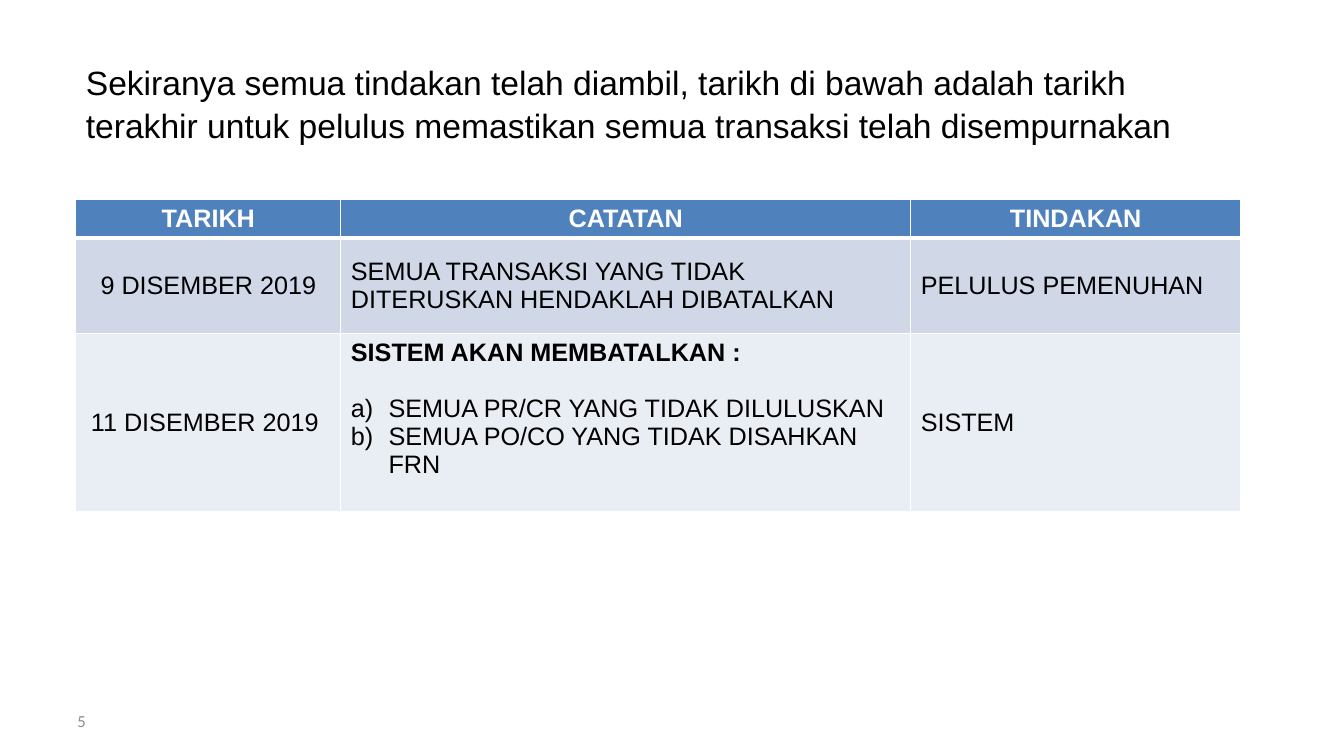
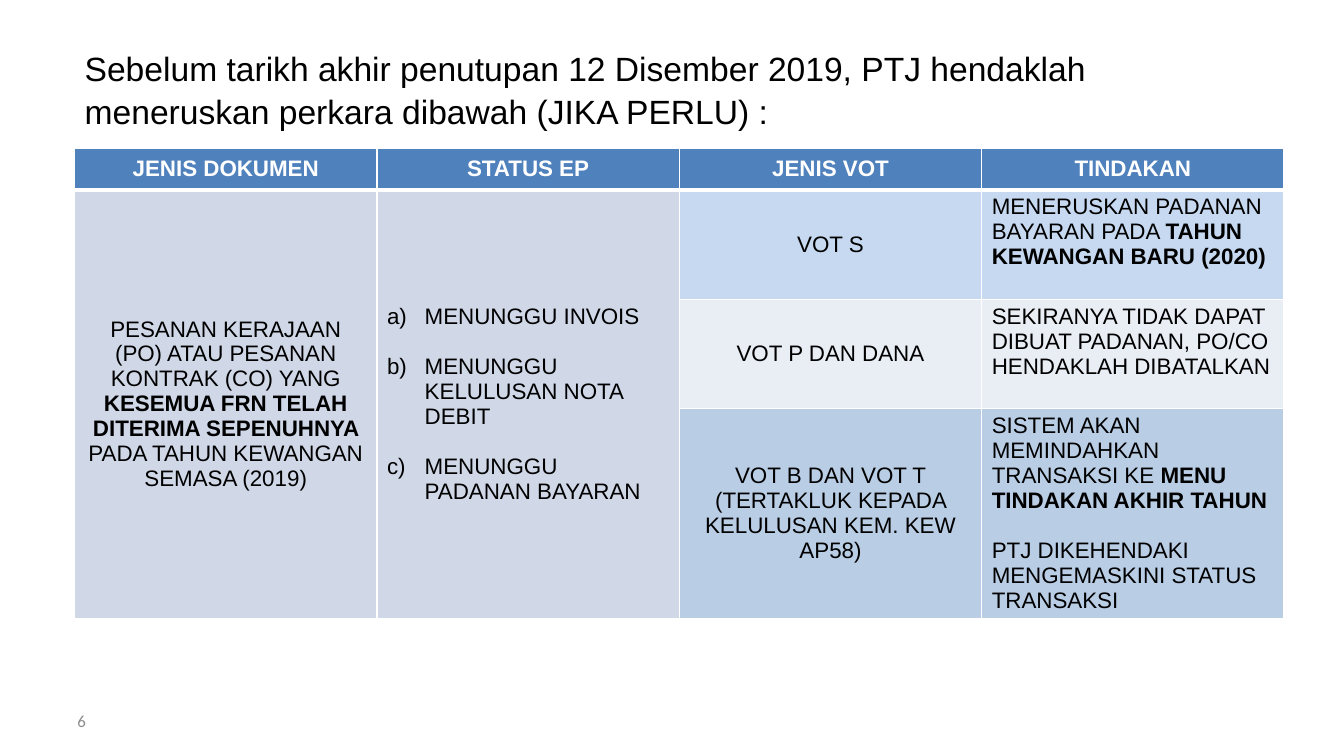
from dataclasses import dataclass
from typing import Any, Optional

from lxml import etree
from pptx import Presentation
from pptx.dml.color import RGBColor
from pptx.enum.text import MSO_ANCHOR, MSO_AUTO_SIZE, PP_ALIGN
from pptx.oxml.ns import qn
from pptx.util import Cm, Pt

LEFT, CENTER = PP_ALIGN.LEFT, PP_ALIGN.CENTER
TOP, MIDDLE = MSO_ANCHOR.TOP, MSO_ANCHOR.MIDDLE
NO_FIT = MSO_AUTO_SIZE.NONE
TITLE_ONLY = 5

COLORS = {
    "header": "4F81BD",
    "band_dark": "D0D8E8",
    "band_light": "E9EDF4",
    "vot_s": "C6D9F1",
    "vot_b": "B9CDE5",
    "white": "FFFFFF",
    "black": "000000",
    "number": "8C8C8C",
}
TITLE_FORMAT = {"name": "Arial", "size": Pt(24), "bold": False}
NUMBER_FORMAT = {"name": "Calibri", "size": Pt(12), "bold": False}
THIN, THICK = Pt(1), Pt(3)
LIST_INDENT = Cm(0.95)


@dataclass(frozen=True)
class Span:
    text: str
    bold: bool = False


@dataclass(frozen=True)
class Para:
    spans: tuple[Span, ...]
    align: Any = LEFT
    numbered: bool = False
    gap: float = 0


@dataclass(frozen=True)
class Cell:
    paras: tuple[Para, ...]
    fill: str
    anchor: Any = MIDDLE
    color: str = "black"
    rows: int = 1


@dataclass(frozen=True)
class TablePage:
    number: str
    title: str
    title_top: float
    table_left: float
    table_top: float
    columns: tuple[float, ...]
    heights: tuple[float, ...]
    size: int
    cells: tuple[tuple[Optional[Cell], ...], ...]


# Cell builders
def header_row(*labels: str) -> tuple[Cell, ...]:
    return tuple(
        Cell((Para((Span(label, True),), CENTER),), "header", color="white")
        for label in labels
    )


def plain(text: str, fill: str, align: Any = LEFT, anchor: Any = MIDDLE) -> Cell:
    return Cell((Para((Span(text),), align),), fill, anchor)


# Content
PAGES = (
    TablePage(
        "5",
        "Sekiranya semua tindakan telah diambil, tarikh di bawah adalah tarikh "
        "terakhir untuk pelulus memastikan semua transaksi telah disempurnakan",
        1.37, 1.91, 5.03, (6.68, 14.36, 8.32), (0.95, 2.4, 4.5), 18,
        (
            header_row("TARIKH", "CATATAN", "TINDAKAN"),
            (
                plain("9 DISEMBER 2019", "band_dark", CENTER),
                plain("SEMUA TRANSAKSI YANG TIDAK DITERUSKAN HENDAKLAH DIBATALKAN",
                      "band_dark"),
                plain("PELULUS PEMENUHAN", "band_dark"),
            ),
            (
                plain("11 DISEMBER 2019 ", "band_light", CENTER),
                Cell((
                    Para((Span("SISTEM AKAN MEMBATALKAN :", True),)),
                    Para((Span("SEMUA PR/CR YANG TIDAK DILULUSKAN"),),
                         numbered=True, gap=20),
                    Para((Span("SEMUA PO/CO YANG TIDAK DISAHKAN FRN"),),
                         numbered=True),
                ), "band_light", TOP),
                plain("SISTEM", "band_light"),
            ),
        ),
    ),
    TablePage(
        "6",
        "Sebelum tarikh akhir penutupan 12 Disember 2019, PTJ hendaklah "
        "meneruskan perkara dibawah (JIKA PERLU) :",
        1.02, 1.88, 3.75, (7.62,) * 4, (1.03, 2.77, 2.75, 5.26), 16,
        (
            header_row("JENIS DOKUMEN", "STATUS EP", "JENIS VOT", "TINDAKAN"),
            (
                Cell((Para((
                    Span("PESANAN KERAJAAN (PO) ATAU PESANAN KONTRAK (CO) YANG "),
                    Span("KESEMUA FRN TELAH DITERIMA SEPENUHNYA ", True),
                    Span("PADA TAHUN KEWANGAN SEMASA (2019)"),
                ), CENTER),), "band_dark", rows=3),
                Cell((
                    Para((Span("MENUNGGU INVOIS"),), numbered=True),
                    Para((Span("MENUNGGU KELULUSAN NOTA DEBIT"),),
                         numbered=True, gap=18),
                    Para((Span("MENUNGGU PADANAN BAYARAN"),),
                         numbered=True, gap=18),
                ), "band_dark", rows=3),
                plain("VOT S", "vot_s", CENTER),
                Cell((Para((
                    Span("MENERUSKAN PADANAN BAYARAN PADA "),
                    Span("TAHUN KEWANGAN BARU (2020)", True),
                )),), "vot_s", TOP),
            ),
            (
                None,
                None,
                plain("VOT P DAN DANA", "band_light", CENTER),
                plain("SEKIRANYA TIDAK DAPAT DIBUAT PADANAN, PO/CO HENDAKLAH "
                      "DIBATALKAN", "band_light", anchor=TOP),
            ),
            (
                None,
                None,
                plain("VOT B DAN VOT T (TERTAKLUK KEPADA KELULUSAN KEM. KEW AP58)",
                      "vot_b", CENTER),
                Cell((
                    Para((
                        Span("SISTEM AKAN MEMINDAHKAN TRANSAKSI KE "),
                        Span("MENU TINDAKAN AKHIR TAHUN", True),
                    )),
                    Para((Span("PTJ DIKEHENDAKI MENGEMASKINI STATUS TRANSAKSI"),),
                         gap=18),
                ), "vot_b", TOP),
            ),
        ),
    ),
)


# Text helpers
def set_all(target: Any, values: dict[str, Any]) -> None:
    for name, value in values.items():
        setattr(target, name, value)


def add_span(para: Any, text: str, values: dict[str, Any], color: str) -> None:
    run = para.add_run()
    run.text = text
    set_all(run.font, values)
    run.font.color.rgb = RGBColor.from_string(COLORS[color])


def add_numbering(para: Any) -> None:
    properties = para._p.get_or_add_pPr()
    properties.set("marL", str(LIST_INDENT))
    properties.set("indent", str(-LIST_INDENT))
    etree.SubElement(properties, qn("a:buFont"), typeface="+mj-lt")
    etree.SubElement(properties, qn("a:buAutoNum"), type="alphaLcParenR")


# Table parts
def add_borders(cell: Any, row: int) -> None:
    widths = {
        "L": THIN,
        "R": THIN,
        "T": THICK if row == 1 else THIN,
        "B": THICK if row == 0 else THIN,
    }
    properties = cell._tc.get_or_add_tcPr()
    for side, width in widths.items():
        line = etree.SubElement(properties, qn(f"a:ln{side}"), w=str(width))
        fill = etree.SubElement(line, qn("a:solidFill"))
        etree.SubElement(fill, qn("a:srgbClr"), val=COLORS["white"])


def fill_cell(target: Any, cell: Cell, size: int) -> None:
    target.fill.solid()
    target.fill.fore_color.rgb = RGBColor.from_string(COLORS[cell.fill])
    target.vertical_anchor = cell.anchor
    frame = target.text_frame
    for index, content in enumerate(cell.paras):
        para = frame.add_paragraph() if index else frame.paragraphs[0]
        para.alignment = content.align
        if content.gap:
            para.space_before = Pt(content.gap)
        if content.numbered:
            add_numbering(para)
        for span in content.spans:
            values = {"name": "Arial", "size": Pt(size), "bold": span.bold}
            add_span(para, span.text, values, cell.color)


def add_page_table(slide: Any, page: TablePage) -> None:
    table = slide.shapes.add_table(
        len(page.heights), len(page.columns),
        Cm(page.table_left), Cm(page.table_top),
        Cm(sum(page.columns)), Cm(sum(page.heights)),
    ).table
    for column, width in zip(table.columns, page.columns):
        column.width = Cm(width)
    for row, height in zip(table.rows, page.heights):
        row.height = Cm(height)
    for r, cells in enumerate(page.cells):
        for c, cell in enumerate(cells):
            target = table.cell(r, c)
            add_borders(target, r)
            if cell is None:
                continue
            if cell.rows > 1:
                target.merge(table.cell(r + cell.rows - 1, c))
            fill_cell(target, cell, page.size)


# Shared page parts
def add_title(slide: Any, page: TablePage) -> None:
    title = slide.shapes.title
    set_all(title, {"left": Cm(page.table_left), "top": Cm(page.title_top),
                    "width": Cm(29.39), "height": Cm(2.31)})
    set_all(title.text_frame, {"word_wrap": True, "auto_size": NO_FIT,
                               "vertical_anchor": TOP})
    para = title.text_frame.paragraphs[0]
    set_all(para, {"alignment": LEFT, "line_spacing": 1.06})
    add_span(para, page.title, TITLE_FORMAT, "black")


def add_page_number(slide: Any, number: str) -> None:
    box = slide.shapes.add_textbox(Cm(1.7), Cm(17.65), Cm(7.9), Cm(1.02))
    set_all(box.text_frame, {"word_wrap": True, "vertical_anchor": MIDDLE})
    add_span(box.text_frame.paragraphs[0], number, NUMBER_FORMAT, "number")


def main() -> None:
    deck = Presentation()
    deck.slide_width, deck.slide_height = Cm(33.87), Cm(19.05)
    for page in PAGES:
        slide = deck.slides.add_slide(deck.slide_layouts[TITLE_ONLY])
        add_title(slide, page)
        add_page_table(slide, page)
        add_page_number(slide, page.number)
    deck.save("out.pptx")


if __name__ == "__main__":
    main()
